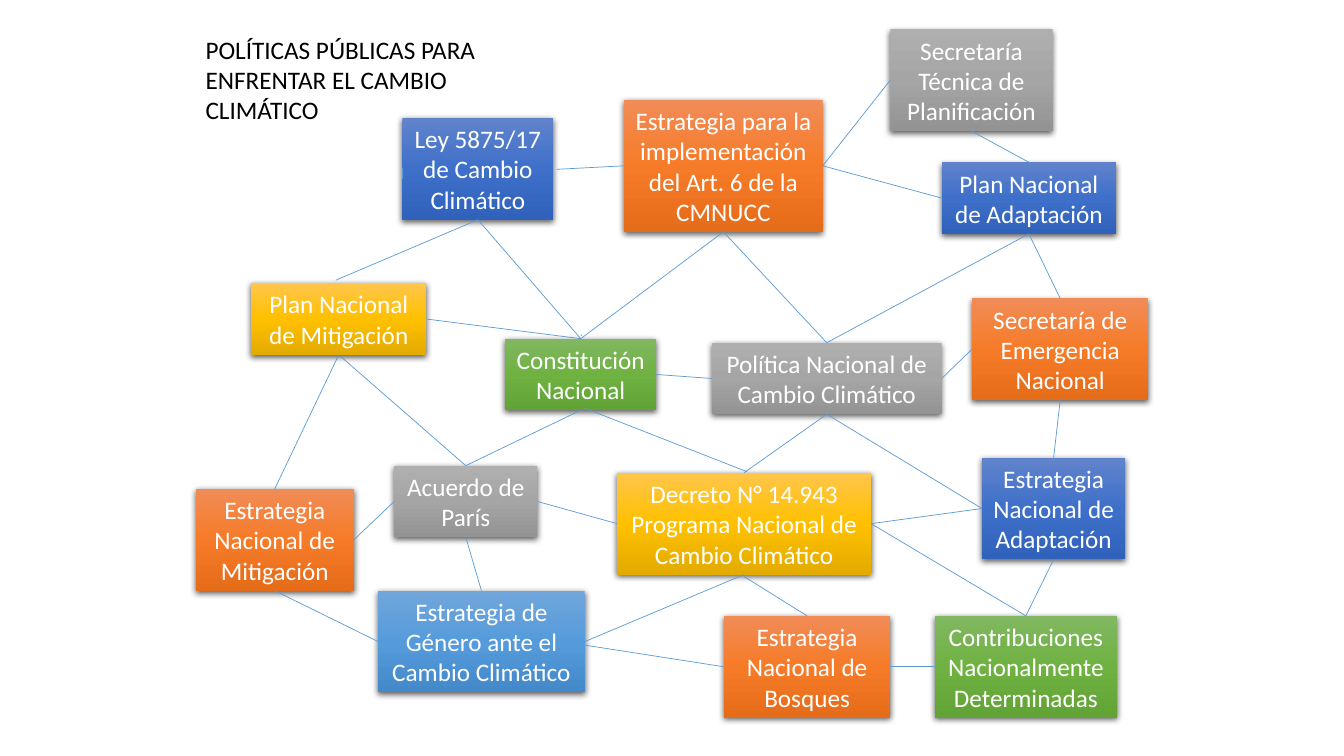
"""Build a slide mapping the public policies that address climate change."""
from lxml import etree
from pptx import Presentation, util as u
from pptx.dml.color import RGBColor
from pptx.enum import shapes, text
from pptx.oxml.ns import qn

PX = 9144
SLIDE = (1333, 750)
THEME = {
    "font": "Calibri", "size": 18, "line_width": 0.5,
    "line": "5B9BD5", "on_box": "FFFFFF", "title": "000000", "shadow": "000000",
    "blue": ("6183CB", "3E70CA", "3062BB"),
    "gold": ("FFC64B", "FFC000", "E3AB00"),
    "orange": ("F18C57", "F67B28", "E56C19"),
    "sky": ("71A6DB", "559BDB", "448ACA"),
    "gray": ("AFAFAF", "A5A5A5", "939393"),
    "green": ("81B861", "6FB242", "62A336"),
}
TITLE = ("POLÍTICAS PÚBLICAS PARA ENFRENTAR EL CAMBIO CLIMÁTICO", 194, 29, 358, 101)

# name: text, colour, left, top, width, lines of text
BOXES = {
    "constitucion": ("Constitución Nacional", "green", 501, 336, 150, 2),
    "ley": ("Ley 5875/17 de Cambio Climático", "blue", 399, 117, 150, 3),
    "plan_mitigacion": ("Plan Nacional de Mitigación", "gold", 249, 281, 174, 2),
    "estr_mitigacion": ("Estrategia Nacional de Mitigación", "orange", 194, 485, 157, 3),
    "genero": ("Estrategia de Género ante el Cambio Climático", "sky", 375, 586, 205, 3),
    "articulo_6": ("Estrategia para la implementación del Art. 6 de la CMNUCC",
                   "orange", 619, 99, 197, 4),
    "plan_adaptacion": ("Plan Nacional de Adaptación", "blue", 934, 161, 173, 2),
    "politica": ("Política Nacional de Cambio Climático", "gray", 706, 340, 228, 2),
    "estr_adaptacion": ("Estrategia Nacional de Adaptación", "blue", 974, 454, 142, 3),
    "decreto": ("Decreto N° 14.943 Programa Nacional de Cambio Climático",
                "gold", 612, 469, 252, 3),
    "planificacion": ("Secretaría Técnica de Planificación", "gray", 883, 29, 161, 3),
    "emergencia": ("Secretaría de Emergencia Nacional", "orange", 964, 296, 175, 3),
    "paris": ("Acuerdo de París", "gray", 391, 462, 142, 2),
    "bosques": ("Estrategia Nacional de Bosques", "orange", 718, 611, 165, 3),
    "contribuciones": ("Contribuciones Nacionalmente Determinadas", "green", 927, 611, 181, 3),
}

TOP, LEFT, BOTTOM, RIGHT = range(4)
# each end is (box name, side) or a free point (x, y)
LINKS = [
    ((399, 167), (399, 178)),
    ((552, 168), ("articulo_6", LEFT)),
    (("ley", BOTTOM), ("constitucion", TOP)),
    ((333, 278), ("ley", BOTTOM)),
    ((576, 332), (577, 333)),
    (("constitucion", TOP), ("articulo_6", BOTTOM)),
    (("constitucion", RIGHT), ("politica", LEFT)),
    (("plan_mitigacion", RIGHT), ("constitucion", TOP)),
    (("constitucion", BOTTOM), ("paris", TOP)),
    ((580, 405), (741, 468)),
    (("decreto", TOP), ("politica", BOTTOM)),
    (("articulo_6", BOTTOM), ("politica", TOP)),
    (("paris", TOP), ("plan_mitigacion", BOTTOM)),
    (("plan_mitigacion", BOTTOM), ("estr_mitigacion", TOP)),
    (("paris", LEFT), ("estr_mitigacion", RIGHT)),
    (("paris", BOTTOM), ("genero", TOP)),
    (("estr_mitigacion", BOTTOM), ("genero", LEFT)),
    ((580, 640), ("bosques", LEFT)),
    (("bosques", RIGHT), ("contribuciones", LEFT)),
    (("contribuciones", TOP), ("estr_adaptacion", BOTTOM)),
    (("emergencia", BOTTOM), ("estr_adaptacion", TOP)),
    (("plan_adaptacion", BOTTOM), ("emergencia", TOP)),
    (("plan_adaptacion", TOP), ("planificacion", BOTTOM)),
    (("planificacion", LEFT), ("articulo_6", RIGHT)),
    (("articulo_6", RIGHT), ("plan_adaptacion", LEFT)),
    (("politica", RIGHT), ("emergencia", LEFT)),
    (("decreto", RIGHT), ("estr_adaptacion", LEFT)),
    ((738, 572), ("bosques", TOP)),
    (("genero", RIGHT), ("decreto", BOTTOM)),
    (("politica", BOTTOM), ("estr_adaptacion", LEFT)),
    (("plan_adaptacion", BOTTOM), ("politica", TOP)),
    (("paris", RIGHT), ("decreto", LEFT)),
    (("decreto", RIGHT), ("contribuciones", TOP)),
]


def px(*lengths):
    return [u.Emu(n * PX) for n in lengths]


def write(s, words, color, align):
    tf = s.text_frame
    tf.word_wrap = True
    p = tf.paragraphs[0]
    p.text = words
    p.alignment = align
    p.font.name = THEME["font"]
    p.font.size = u.Pt(THEME["size"])
    p.font.color.rgb = RGBColor.from_string(THEME[color])


def add_color(parent, rgb):
    return etree.SubElement(parent, qn("a:srgbClr"), val=rgb)


def shade(s, colors):
    s.fill.gradient()
    s.fill.gradient_angle = 270
    stops = s._element.spPr.find(qn("a:gradFill")).find(qn("a:gsLst"))
    for stop in list(stops):
        stops.remove(stop)
    for i, rgb in enumerate(colors):
        add_color(etree.SubElement(stops, qn("a:gs"), pos=str(i * 50000)), rgb)


def drop_shadow(s):
    s.shadow.inherit = False
    effects = s._element.spPr.find(qn("a:effectLst"))
    shadow = etree.SubElement(effects, qn("a:outerShdw"), blurRad=str(u.Pt(4.5)),
                              dist=str(u.Pt(1.5)), dir="5400000", algn="ctr", rotWithShape="0")
    etree.SubElement(add_color(shadow, THEME["shadow"]), qn("a:alpha"), val="63000")


def add_box(sp, words, color, left, top, width, lines):
    s = sp.add_shape(shapes.MSO_SHAPE.RECTANGLE, *px(left, top, width, 11 + 30 * lines))
    shade(s, THEME[color])
    s.line.fill.background()
    drop_shadow(s)
    s.text_frame.vertical_anchor = text.MSO_ANCHOR.MIDDLE
    write(s, words, "on_box", text.PP_ALIGN.CENTER)
    return s


def add_link(sp, boxes, start, end):
    points = [(0, 0) if e[0] in boxes else e for e in (start, end)]
    c = sp.add_connector(shapes.MSO_CONNECTOR.STRAIGHT, *px(*points[0], *points[1]))
    for (name, side), join in ((start, c.begin_connect), (end, c.end_connect)):
        if name in boxes:
            join(boxes[name], side)
    c.line.color.rgb = RGBColor.from_string(THEME["line"])
    c.line.width = u.Pt(THEME["line_width"])
    etree.SubElement(c._element.spPr, qn("a:effectLst"))


def main():
    prs = Presentation()
    prs.slide_width, prs.slide_height = px(*SLIDE)
    sp = prs.slides.add_slide(prs.slide_layouts[6]).shapes
    boxes = {name: add_box(sp, *box) for name, box in BOXES.items()}
    for start, end in LINKS:
        add_link(sp, boxes, start, end)
    words, *place = TITLE
    write(sp.add_textbox(*px(*place)), words, "title", text.PP_ALIGN.LEFT)
    prs.save("out.pptx")


if __name__ == "__main__":
    main()
